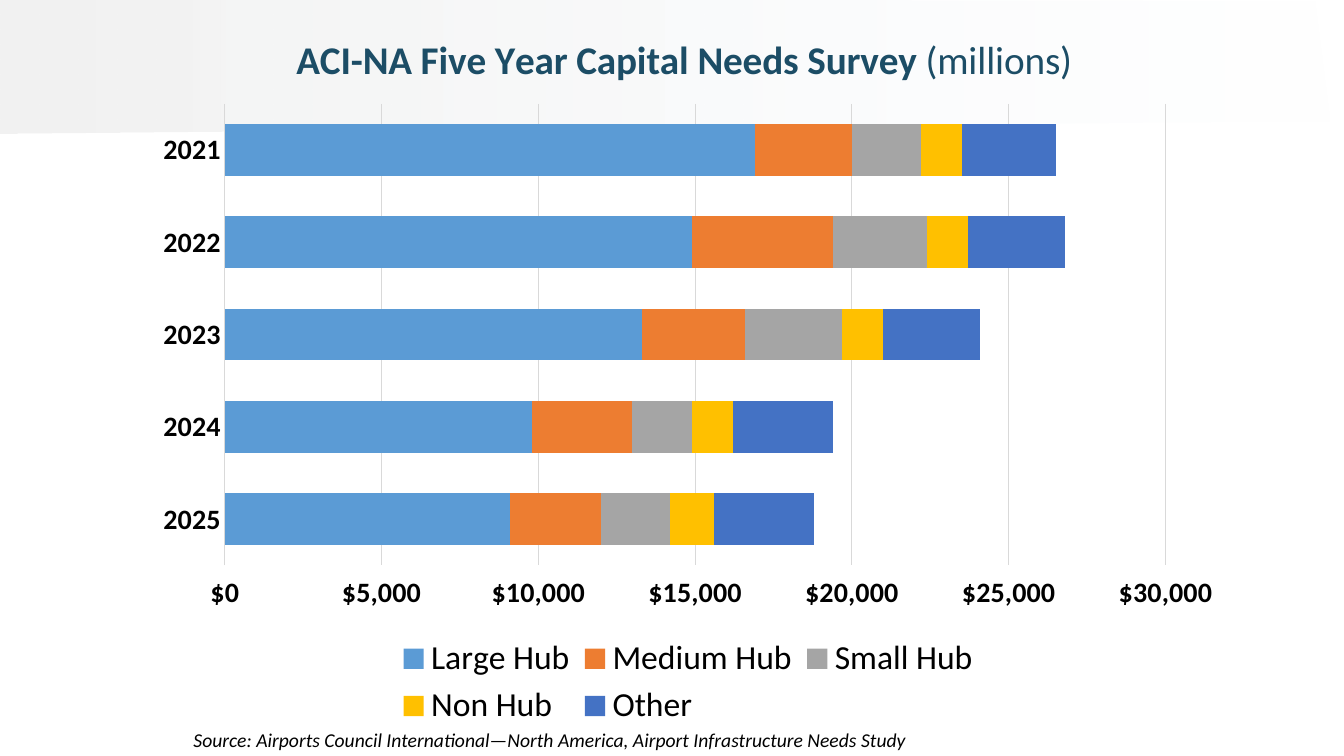
import pptx
import pptx.chart.data
import pptx.dml.color
import pptx.enum.chart
import pptx.oxml
import pptx.oxml.ns
import pptx.util

Inches = pptx.util.Inches
ns = pptx.oxml.ns

COLORS = {
    "title": "1C4D66", "text": "000000", "grid": "D9D9D9",
    "band_light": "F7FAFD", "band_grey": "F2F2F2",
    "Large Hub": "5B9BD5", "Medium Hub": "ED7D31", "Small Hub": "A5A5A5",
    "Non Hub": "FFC000", "Other": "4472C4",
}
YEARS = ["2021", "2022", "2023", "2024", "2025"]
NEEDS = {
    "Large Hub": [16900, 14900, 13300, 9800, 9100],
    "Medium Hub": [3100, 4500, 3300, 3200, 2900],
    "Small Hub": [2200, 3000, 3100, 1900, 2200],
    "Non Hub": [1300, 1300, 1300, 1300, 1400],
    "Other": [3000, 3100, 3100, 3200, 3200],
}
BAND = [(13.04, 0.02), (6.18, 0), (0, 0), (0, 1.32), (13.19, 1.19)]
CHART_WIDTH, CHART_HEIGHT = 10.84, 7.16


def rgb(name):
    return pptx.dml.color.RGBColor.from_string(COLORS[name])


def format_font(font, size, color="text", bold=False, italic=False):
    font.name = "Calibri"
    font.size = pptx.util.Pt(size)
    font.bold = bold
    font.italic = italic
    font.color.rgb = rgb(color)


def write_text(paragraph, text, **style):
    run = paragraph.add_run()
    run.text = text
    format_font(run.font, **style)


def place(element, index, left, top, width=None, height=None, inner=False):
    for old in element.findall(ns.qn("c:layout")):
        element.remove(old)
    parts = [("layoutTarget", "inner")] if inner else []
    parts += [("xMode", "edge"), ("yMode", "edge"),
              ("x", left / CHART_WIDTH), ("y", top / CHART_HEIGHT)]
    if width:
        parts += [("w", width / CHART_WIDTH), ("h", height / CHART_HEIGHT)]
    body = "".join(f'<c:{tag} val="{value}"/>' for tag, value in parts)
    element.insert(index, pptx.oxml.parse_xml(
        f'<c:layout {ns.nsdecls("c")}><c:manualLayout>{body}</c:manualLayout></c:layout>'))


class SurveySlide:
    def __init__(self, presentation):
        self.slide = presentation.slides.add_slide(presentation.slide_layouts[6])
        self.shapes = self.slide.shapes

    def band(self, points):
        start, *rest = [(Inches(x), Inches(y)) for x, y in points]
        builder = self.shapes.build_freeform(*start)
        builder.add_line_segments(rest, close=True)
        band = builder.convert_to_shape()
        band.shadow.inherit = False
        band.line.fill.background()
        band.fill.gradient()
        band.fill.gradient_angle = 0
        for stop, name, position in zip(
                band.fill.gradient_stops, ("band_grey", "band_light"), (0, 1)):
            stop.color.rgb = rgb(name)
            stop.position = position
        light = list(band._element.iter(ns.qn("a:srgbClr")))[-1]
        light.append(pptx.oxml.parse_xml(
            f'<a:alpha {ns.nsdecls("a")} val="4000"/>'))

    def chart(self, years, needs, left, top):
        data = pptx.chart.data.CategoryChartData(number_format='"$"#,##0')
        data.categories = years
        for hub, amounts in needs.items():
            data.add_series(hub, amounts)
        chart = self.shapes.add_chart(
            pptx.enum.chart.XL_CHART_TYPE.BAR_STACKED, Inches(left), Inches(top),
            Inches(CHART_WIDTH), Inches(CHART_HEIGHT), data).chart
        format_font(chart.font, 10)

        plot = chart.plots[0]
        plot.gap_width = 79
        plot.overlap = 100
        plot.vary_by_categories = False
        for series in plot.series:
            series.format.fill.solid()
            series.format.fill.fore_color.rgb = rgb(series.name)
        self.axes(chart)

        title = chart.chart_title
        heading = title.text_frame.paragraphs[0]
        write_text(heading, "ACI-NA Five Year Capital Needs Survey",
                   size=28, color="title", bold=True)
        write_text(heading, " (millions)", size=28, color="title")

        chart.has_legend = True
        legend = chart.legend
        legend.position = pptx.enum.chart.XL_LEGEND_POSITION.BOTTOM
        legend.include_in_layout = False
        format_font(legend.font, 24)

        place(title._element, 1, 1.5, 0.2)
        place(legend._element, 1, 2.44, 6.15, 5.95, 1)
        place(chart._chartSpace.chart.plotArea, 0, 0.82, 0.91, 9.33, 4.58, inner=True)

    def axes(self, chart):
        years, dollars = chart.category_axis, chart.value_axis
        for axis in (years, dollars):
            axis.major_tick_mark = pptx.enum.chart.XL_TICK_MARK.NONE
            axis.minor_tick_mark = pptx.enum.chart.XL_TICK_MARK.NONE
            format_font(axis.tick_labels.font, 20, bold=True)
        years.reverse_order = True
        dollars.tick_label_position = pptx.enum.chart.XL_TICK_LABEL_POSITION.HIGH
        dollars.minimum_scale = 0
        dollars.maximum_scale = 30000
        dollars.major_unit = 5000
        dollars.tick_labels.number_format = '"$"#,##0'
        dollars.tick_labels.number_format_is_linked = False
        dollars.format.line.fill.background()
        for line in (years.format.line, dollars.major_gridlines.format.line):
            line.color.rgb = rgb("grid")
            line.width = pptx.util.Pt(0.75)

    def note(self, text, left, top, width, height, **style):
        frame = self.shapes.add_textbox(
            Inches(left), Inches(top), Inches(width), Inches(height)).text_frame
        frame.word_wrap = False
        write_text(frame.paragraphs[0], text, **style)


def main():
    presentation = pptx.Presentation()
    presentation.slide_width = Inches(13.33)
    presentation.slide_height = Inches(7.5)
    survey = SurveySlide(presentation)
    survey.band(BAND)
    survey.chart(YEARS, NEEDS, 1.41, 0.12)
    survey.note("Source: Airports Council International—North America, "
                "Airport Infrastructure Needs Study",
                1.82, 7.17, 7.34, 0.34, size=14, italic=True)
    presentation.save("out.pptx")


if __name__ == "__main__":
    main()
